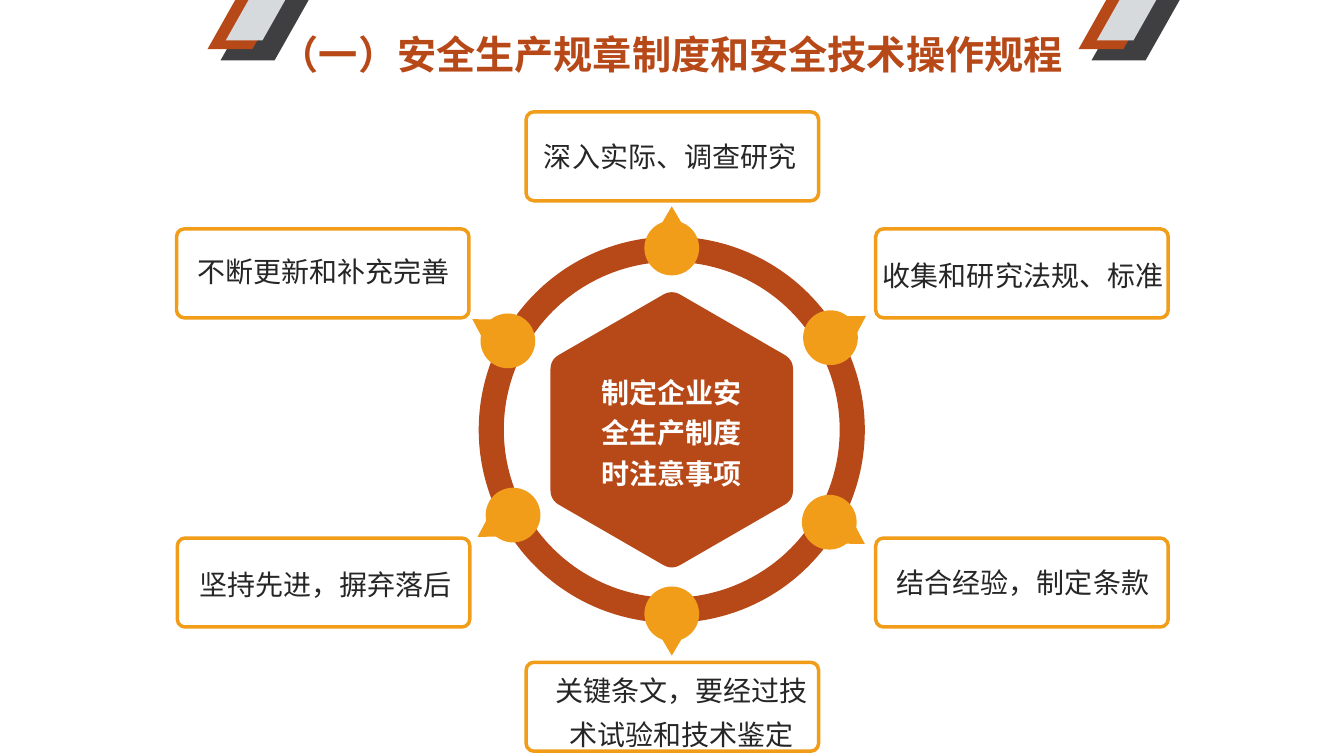
from math import cos, radians, sin

from lxml.etree import SubElement
from pptx import Presentation
from pptx.dml.color import RGBColor
from pptx.enum.shapes import MSO_SHAPE as Preset
from pptx.enum.text import MSO_ANCHOR as Anchor, MSO_AUTO_SIZE as AutoSize, PP_ALIGN as Align
from pptx.oxml.ns import qn
from pptx.util import Cm, Pt

FONT = "Noto Sans CJK SC"
RUST, AMBER, CHARCOAL, SILVER = "B74919", "F19D19", "3F3E40", "D6DADD"
INK, WHITE = "262626", "FFFFFF"
CENTER_X, CENTER_Y = 16.93, 10.83
CARD_WIDTH, CARD_HEIGHT = 7.37, 2.24

STEPS = [
    ((13.26, 2.82), (0.2, 0.58), 6.93, (16.93, 6.25), 0, "深入实际、调查研究"),
    ((22.07, 5.77), (-0.07, 0.61), 7.65, (20.93, 8.51), 58.5, "收集和研究法规、标准"),
    ((22.07, 13.56), (0.28, 0.56), 6.93, (20.9, 13.16), 121.5, "结合经验，制定条款"),
    ((13.26, 16.69), (0.44, -0.1), 6.95, (16.93, 15.47), 180, "关键条文，要经过技术试验和技术鉴定"),
    ((4.47, 13.56), (0.31, 0.61), 6.93, (12.93, 12.98), 238.5, "坚持先进，摒弃落后"),
    ((4.45, 5.77), (0.27, 0.53), 6.93, (12.8, 8.59), 301.5, "不断更新和补充完善"),
]


def color(value):
    """Turn a hex string into a colour."""
    return RGBColor.from_string(value)


def paint(shape, fill=None, line=None):
    """Set fill and outline and remove the shadow."""
    shape.shadow.inherit = False
    if fill:
        shape.fill.solid()
        shape.fill.fore_color.rgb = color(fill)
    else:
        shape.fill.background()
    if line:
        shape.line.color.rgb = color(line)
        shape.line.width = Pt(2.5)
    else:
        shape.line.fill.background()
    return shape


def add_preset(shapes, preset, left, top, width, height, adjust=None, rotation=0, **colors):
    """Add a preset shape, measured in centimetres."""
    shape = shapes.add_shape(preset, Cm(left), Cm(top), Cm(width), Cm(height))
    if adjust is not None:
        shape.adjustments[0] = adjust
    shape.rotation = rotation
    return paint(shape, **colors)


def write(holder, text, size=20, ink=INK, bold=False, align=Align.LEFT, spacing=1.0, wrap=True):
    """Write one formatted paragraph into a text holder."""
    frame = holder.text_frame
    frame.word_wrap = wrap
    frame.auto_size = AutoSize.SHAPE_TO_FIT_TEXT
    frame.vertical_anchor = Anchor.TOP
    paragraph = frame.paragraphs[0]
    paragraph.alignment = align
    paragraph.line_spacing = spacing
    run = paragraph.add_run()
    run.text = text
    run.font.size = Pt(size)
    run.font.bold = bold
    run.font.name = FONT
    run.font.color.rgb = color(ink)
    SubElement(run.font._element, qn("a:ea")).set("typeface", FONT)


def add_text(slide, left, top, width, height, text, **style):
    """Add a text box with one formatted paragraph."""
    write(slide.shapes.add_textbox(Cm(left), Cm(top), Cm(width), Cm(height)), text, **style)


def add_heading(slide, left, top, width, height):
    """Place the slide title."""
    heading = slide.shapes.title
    heading.left, heading.top, heading.width, heading.height = map(Cm, (left, top, width, height))
    write(heading, "（一）安全生产规章制度和安全技术操作规程",
          size=28, ink=RUST, bold=True, align=Align.CENTER)


def add_ornament(slide, left, top):
    """Stack three slanted bars beside the title."""
    bars = slide.shapes.add_group_shape().shapes
    for shift, width, height, fill in ((0.33, 2.22, 1.52, CHARCOAL),
                                       (0, 1.83, 1.24, RUST),
                                       (0.46, 1.5, 1.02, SILVER)):
        add_preset(bars, Preset.PARALLELOGRAM, left + shift, top, width, height,
                   adjust=0.564, fill=fill)


def hexagon_outline(center_x, center_y, radius, trim, steps=8):
    """List the points of a hexagon with rounded corners."""
    corners = [(center_x + radius * sin(radians(60 * k)),
                center_y - radius * cos(radians(60 * k))) for k in range(6)]
    share = trim / radius
    points = []
    for k, corner in enumerate(corners):
        before, after = corners[k - 1], corners[(k + 1) % 6]
        for t in (step / steps for step in range(steps + 1)):
            enter, leave = share * (1 - t) ** 2, share * t ** 2
            points.append(tuple(Cm(c + enter * (b - c) + leave * (a - c))
                                for b, c, a in zip(before, corner, after)))
    return points


def add_hub(slide, center_x, center_y):
    """Draw the rounded hexagon, its text and the ring around it."""
    first, *rest = hexagon_outline(center_x, center_y, radius=3.53, trim=0.25)
    outline = slide.shapes.build_freeform(*first)
    outline.add_line_segments(rest, close=True)
    paint(outline.convert_to_shape(), fill=RUST)
    add_text(slide, center_x - 2.26, center_y - 1.66, 4.52, 3.33, "制定企业安全生产制度时注意事项",
             ink=WHITE, bold=True, align=Align.CENTER, spacing=1.2)
    ring = 9.73
    add_preset(slide.shapes, Preset.DONUT, center_x - ring / 2, center_y - ring / 2,
               ring, ring, adjust=0.065, fill=RUST)


def add_marker(slide, center_x, center_y, direction):
    """Draw a dot whose tip points in a direction, clockwise from the top."""
    dot, tip_width, tip_height, reach = 1.38, 0.66, 0.56, 0.77
    parts = slide.shapes.add_group_shape().shapes
    add_preset(parts, Preset.OVAL, center_x - dot / 2, center_y - dot / 2, dot, dot, fill=AMBER)
    tip_x = center_x + reach * sin(radians(direction))
    tip_y = center_y - reach * cos(radians(direction))
    add_preset(parts, Preset.ISOSCELES_TRIANGLE, tip_x - tip_width / 2, tip_y - tip_height / 2,
               tip_width, tip_height, rotation=direction, fill=AMBER)


def add_card(slide, left, top, text_shift, text_width, text):
    """Draw an outlined card with its text."""
    add_preset(slide.shapes, Preset.ROUNDED_RECTANGLE, left, top, CARD_WIDTH, CARD_HEIGHT,
               adjust=0.087, line=AMBER)
    two_lines = len(text) > 10
    style = dict(align=Align.CENTER, spacing=1.3) if two_lines else dict(wrap=False)
    add_text(slide, left + text_shift[0], top + text_shift[1], text_width,
             2.36 if two_lines else 1.12, text, **style)


def main():
    """Build and save the slide."""
    deck = Presentation()
    deck.slide_width, deck.slide_height = Cm(33.87), Cm(19.05)
    slide = deck.slides.add_slide(deck.slide_layouts[5])
    add_hub(slide, CENTER_X, CENTER_Y)
    for corner, text_shift, text_width, marker, direction, text in STEPS:
        add_marker(slide, *marker, direction)
        add_card(slide, *corner, text_shift, text_width, text)
    add_heading(slide, 6.68, 0.64, 20.47, 1.45)
    for left in (5.23, 27.18):
        add_ornament(slide, left, 0)
    deck.save("out.pptx")


if __name__ == "__main__":
    main()
